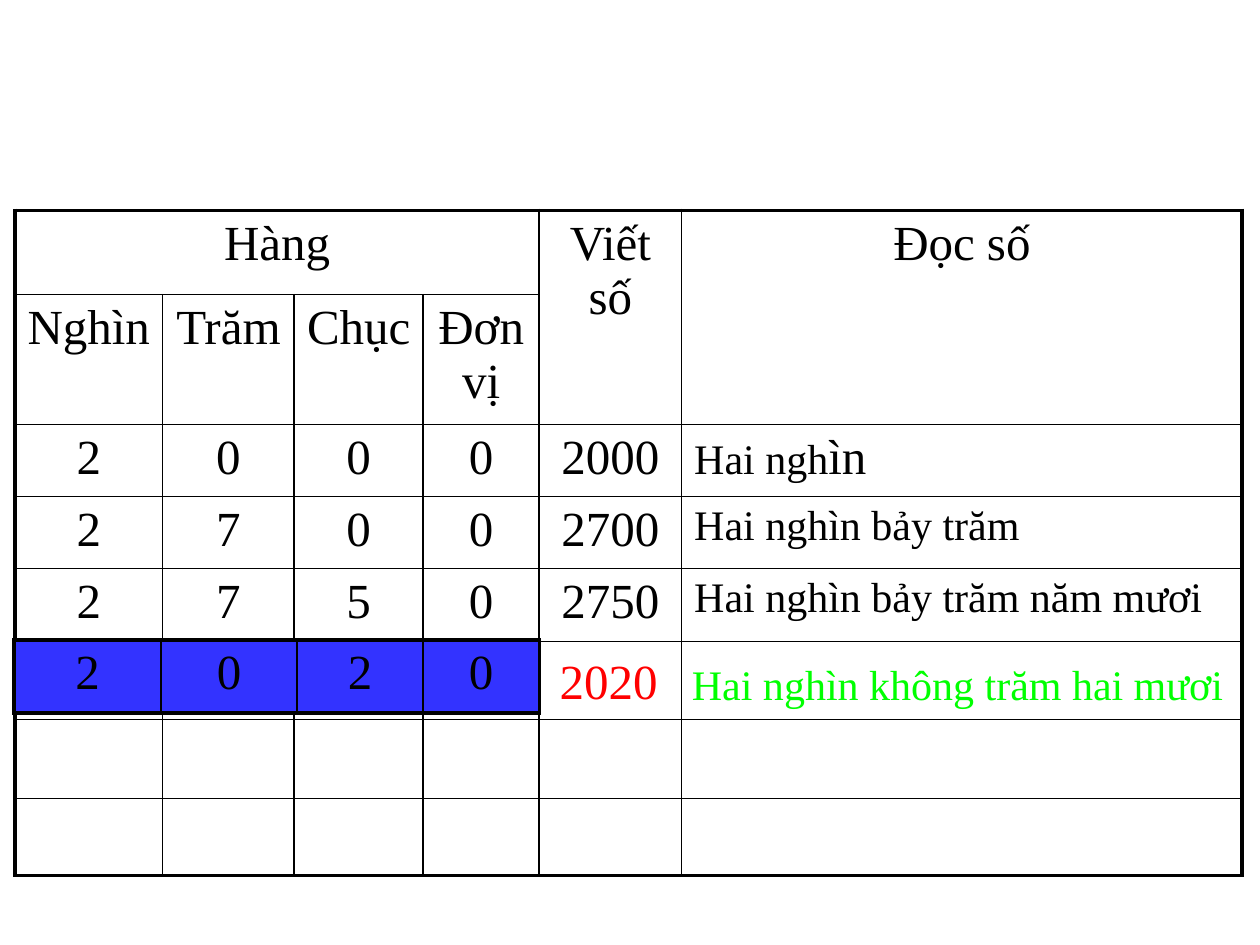
from lxml.etree import SubElement
from pptx import Presentation
from pptx.dml.color import RGBColor
from pptx.enum.shapes import MSO_SHAPE
from pptx.enum.text import MSO_ANCHOR, PP_ALIGN
from pptx.oxml.ns import qn
from pptx.util import Cm, Pt

FONT = "Times New Roman"
COLORS = {"ink": "000000", "paper": "FFFFFF", "highlight": "3333FF",
          "number": "FF0000", "reading": "00FF00"}
THIN, THICK = Pt(1), Pt(2.25)

NUMBER_ROWS = [
    ["Hàng", "", "", "", "Viết số", "Đọc số"],
    ["Nghìn", "Trăm", "Chục", "Đơn vị", "", ""],
    ["2", "0", "0", "0", "2000", [("Hai ngh", 24), ("ìn", 28)]],
    ["2", "7", "0", "0", "2700", [("Hai nghìn bảy trăm", 24)]],
    ["2", "7", "5", "0", "2750", [("Hai nghìn bảy trăm năm mươi", 24)]],
    [""] * 6,
    [""] * 6,
    [""] * 6,
]
NUMBER_WIDTHS = [2.98, 2.65, 2.6, 2.34, 2.87, 11.3]
NUMBER_HEIGHTS = [1.7, 2.62, 1.45, 1.45, 1.47, 1.57, 1.6, 1.55]
NUMBER_MERGES = [((0, 0), (0, 3)), ((0, 4), (1, 4)), ((0, 5), (1, 5))]

ANSWER_ROWS = [["2", "0", "2", "0"]]
ANSWER_WIDTHS = [2.97, 2.74, 2.54, 2.34]
ANSWER_HEIGHTS = [1.47]

LABELS = [
    ("2020", 28, "number", (11, 13.28, 2.54, 0.84)),
    ("Hai nghìn không trăm hai mươi", 24, "reading", (16.89, 13.36, 4.83, 0.84)),
]


def rgb(name):
    return RGBColor.from_string(COLORS[name])


def style_font(font, size, color):
    font.name = FONT
    font.size = Pt(size)
    font.color.rgb = rgb(color)


def write_cell(cell, content):
    paragraph = cell.text_frame.paragraphs[0]
    if isinstance(content, str):
        paragraph.alignment = PP_ALIGN.CENTER
        content = [(content, 28)] if content else []
    for text, size in content:
        span = paragraph.add_run()
        span.text = text
        style_font(span.font, size, "ink")


def set_borders(cell, widths):
    properties = cell._tc.get_or_add_tcPr()
    for index, (side, width) in enumerate(widths.items()):
        line = SubElement(properties, qn(f"a:ln{side}"), w=str(width))
        fill = SubElement(line, qn("a:solidFill"))
        SubElement(fill, qn("a:srgbClr"), val=COLORS["ink"])
        properties.insert(index, line)


def add_grid(page, rows, widths, heights, left, top, merges=(), fill=None):
    last_row, last_column = len(heights) - 1, len(widths) - 1
    table = page.shapes.add_table(len(heights), len(widths), Cm(left), Cm(top),
                                  Cm(sum(widths)), Cm(sum(heights))).table
    table.first_row = table.horz_banding = False
    for column, width in zip(table.columns, widths):
        column.width = Cm(width)
    for row, height in zip(table.rows, heights):
        row.height = Cm(height)
    for start, end in merges:
        table.cell(*start).merge(table.cell(*end))
    for r, contents in enumerate(rows):
        for c, content in enumerate(contents):
            cell = table.cell(r, c)
            write_cell(cell, content)
            if fill:
                cell.fill.solid()
                cell.fill.fore_color.rgb = rgb(fill)
            else:
                cell.fill.background()
            set_borders(cell, {
                "L": THICK if c == 0 else THIN,
                "R": THICK if c == last_column else THIN,
                "T": THICK if r == 0 else THIN,
                "B": THICK if r == last_row else THIN,
            })


def add_label(page, text, size, color, place):
    box = page.shapes.add_shape(MSO_SHAPE.RECTANGLE, *map(Cm, place))
    box.shadow.inherit = False
    box.fill.solid()
    box.fill.fore_color.rgb = rgb("paper")
    box.line.color.rgb = rgb("paper")
    box.line.width = Pt(0.75)
    frame = box.text_frame
    frame.word_wrap = False
    frame.vertical_anchor = MSO_ANCHOR.MIDDLE
    paragraph = frame.paragraphs[0]
    paragraph.text = text
    paragraph.alignment = PP_ALIGN.CENTER
    style_font(paragraph.font, size, color)


def main():
    """Build the slide on reading and writing four-digit numbers."""
    deck = Presentation()
    deck.slide_width, deck.slide_height = Cm(25.4), Cm(19.05)
    page = deck.slides.add_slide(deck.slide_layouts[6])
    add_grid(page, NUMBER_ROWS, NUMBER_WIDTHS, NUMBER_HEIGHTS, 0.3, 4.24,
             merges=NUMBER_MERGES)
    add_grid(page, ANSWER_ROWS, ANSWER_WIDTHS, ANSWER_HEIGHTS, 0.28, 12.9,
             fill="highlight")
    for label in LABELS:
        add_label(page, *label)
    deck.save("out.pptx")


if __name__ == "__main__":
    main()
